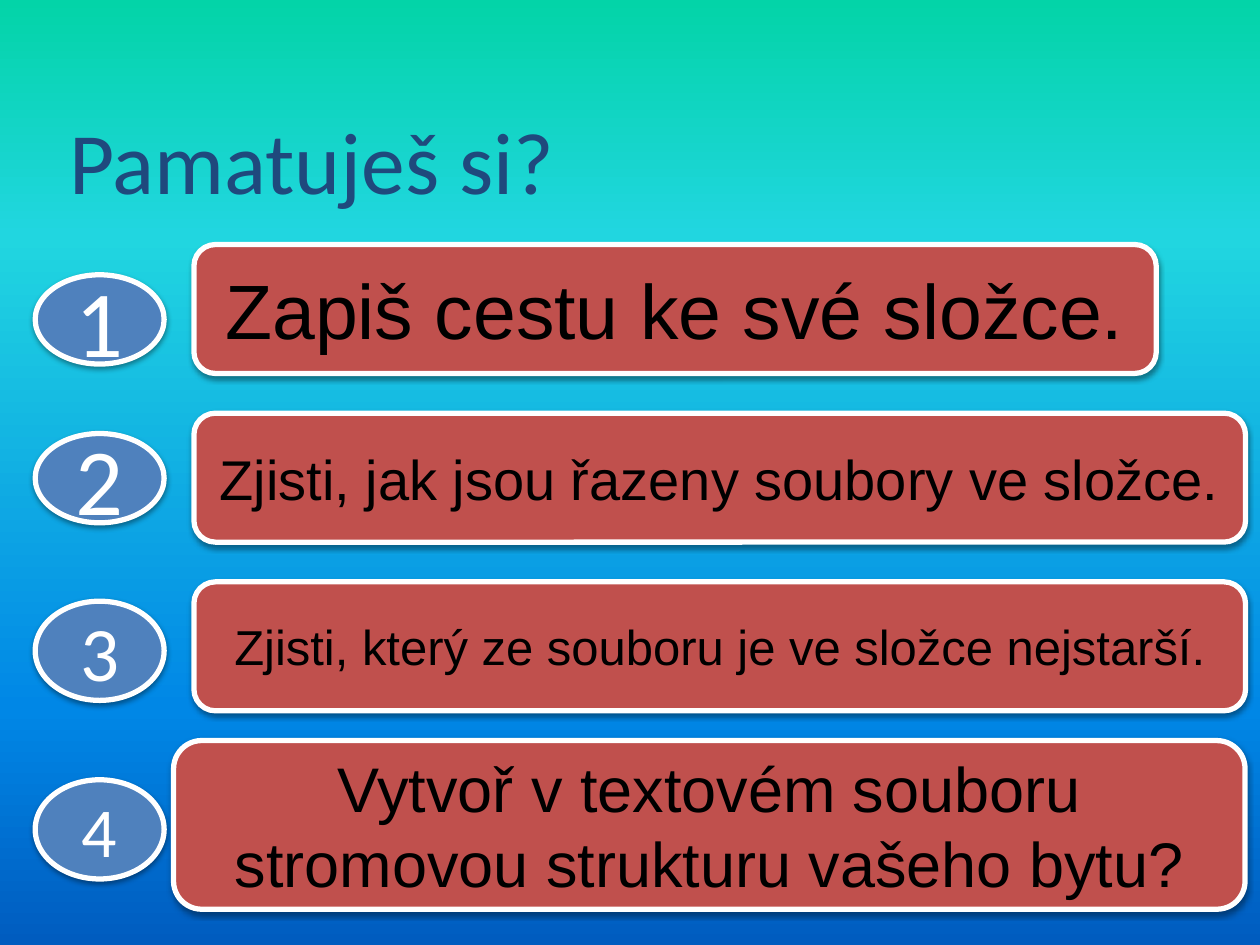
from lxml.etree import SubElement
from pptx import Presentation
from pptx.dml.color import RGBColor
from pptx.enum.shapes import MSO_SHAPE
from pptx.enum.text import MSO_ANCHOR, PP_ALIGN
from pptx.oxml.ns import qn
from pptx.util import Cm, Pt

COLORS = {
    "title": "1F497D",
    "badge": "4F81BD",
    "task": "C0504D",
    "outline": "FFFFFF",
    "number": "FFFFFF",
    "task_text": "000000",
    "shadow": "000000",
}
BACKGROUND_STOPS = {0: "03D4A8", 25: "21D6E0", 75: "0087E6", 100: "005CBF"}

# number, font size, top, height
BADGES = [
    ("1", 54, 5.54, 1.8),
    ("2", 54, 8.74, 1.8),
    ("3", 44, 12.12, 2),
    ("4", 40, 15.72, 2),
]
# wording, font size, left, top, width, height
TASKS = [
    ("Zapiš cestu ke své složce.", 44, 3.91, 4.93, 19.4, 2.6),
    ("Zjisti, jak jsou řazeny soubory ve složce.", 32, 3.91, 8.33, 21.2, 2.6),
    ("Zjisti, který ze souboru je ve složce nejstarší.", 28, 3.91, 11.73, 21.2, 2.6),
    ("Vytvoř v textovém souboru stromovou strukturu vašeho bytu?", 36, 3.5, 14.93, 21.6, 3.4),
]


def rgb(name):
    return RGBColor.from_string(COLORS[name])


def paint_background(slide):
    fill = slide.background.fill
    fill.gradient()
    fill.gradient_angle = 270
    stops = next(slide.element.iter(qn("a:gsLst")))
    for stop in list(stops):
        stops.remove(stop)
    for percent, color in BACKGROUND_STOPS.items():
        stop = SubElement(stops, qn("a:gs"), pos=str(percent * 1000))
        SubElement(stop, qn("a:srgbClr"), val=color)


def write_text(frame, wording, size, font_name, color, align):
    frame.word_wrap = True
    paragraph = frame.paragraphs[0]
    paragraph.alignment = align
    run = paragraph.add_run()
    run.text = wording
    for attribute, value in {"size": Pt(size), "name": font_name}.items():
        setattr(run.font, attribute, value)
    run.font.color.rgb = rgb(color)


def add_soft_shadow(shape):
    """Give the shape a soft shadow that falls straight down."""
    shape.shadow.inherit = False
    effects = shape.element.spPr.find(qn("a:effectLst"))
    shadow = SubElement(effects, qn("a:outerShdw"), blurRad="40000",
                        dist="20000", dir="5400000", rotWithShape="0")
    color = SubElement(shadow, qn("a:srgbClr"), val=COLORS["shadow"])
    SubElement(color, qn("a:alpha"), val="38000")


def add_panel(slide, preset, place, fill_color):
    """Add a filled shape with a white outline and a shadow."""
    panel = slide.shapes.add_shape(preset, *map(Cm, place))
    panel.fill.solid()
    panel.fill.fore_color.rgb = rgb(fill_color)
    panel.line.color.rgb = rgb("outline")
    panel.line.width = Pt(3)
    add_soft_shadow(panel)
    panel.text_frame.vertical_anchor = MSO_ANCHOR.MIDDLE
    return panel


def add_title(slide, wording):
    title = slide.shapes.add_textbox(Cm(1.27), Cm(1.96), Cm(22.86), Cm(3.18))
    margins = {"margin_left": Cm(0.13), "margin_top": Cm(0.2)}
    for attribute, value in margins.items():
        setattr(title.text_frame, attribute, value)
    write_text(title.text_frame, wording, 50, "Calibri", "title", PP_ALIGN.LEFT)


def add_badge(slide, number, size, top, height):
    badge = add_panel(slide, MSO_SHAPE.OVAL, (0.71, top, 2.6, height), "badge")
    write_text(badge.text_frame, number, size, "Calibri", "number", PP_ALIGN.CENTER)


def add_task(slide, wording, size, *place):
    task = add_panel(slide, MSO_SHAPE.FLOWCHART_ALTERNATE_PROCESS, place, "task")
    write_text(task.text_frame, wording, size, "Arial", "task_text", PP_ALIGN.CENTER)


def main():
    presentation = Presentation()
    presentation.slide_width = Cm(25.4)
    presentation.slide_height = Cm(19.05)
    slide = presentation.slides.add_slide(presentation.slide_layouts[6])
    paint_background(slide)
    add_title(slide, "Pamatuješ si?")
    for badge in BADGES:
        add_badge(slide, *badge)
    for task in TASKS:
        add_task(slide, *task)
    presentation.save("out.pptx")


if __name__ == "__main__":
    main()
